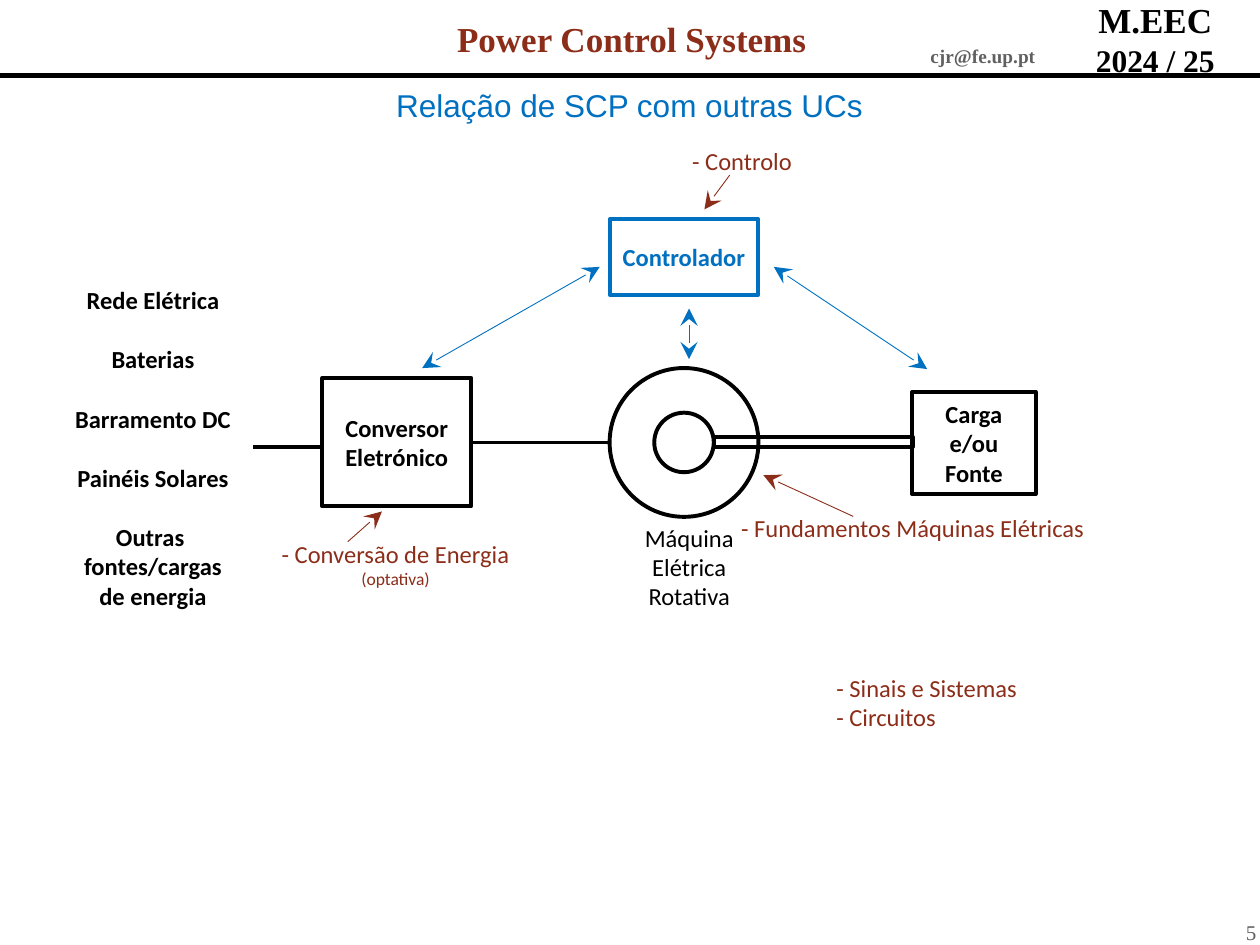
import pptx
import pptx.util
import pptx.dml.color
import pptx.enum.shapes
import pptx.enum.text
import pptx.oxml.ns
import lxml.etree

Cm, Pt = pptx.util.Cm, pptx.util.Pt
KIND = pptx.enum.shapes.MSO_SHAPE
ALIGN = pptx.enum.text.PP_ALIGN
ANCHOR = pptx.enum.text.MSO_ANCHOR
COLORS = {"black": "000000", "blue": "0070C0", "brown": "8C2D19", "gray": "606060"}

# Text formats: font values, then layout values
HEAD = dict(name="Times New Roman", bold=True, color="brown", size=20, pad=False)
TITLE = dict(name="Arial", color="blue", size=18, pad=False, anchor="TOP", wrap=True)
NOTE = dict(color="brown", anchor="TOP", wrap=True)
BOLD = dict(bold=True)

# A paragraph is a text, or a text with its own values
TITLE_TEXT = ["Relação de SCP com outras UCs"]
TITLE_AT = (5.69, 1.73, 14, 0.79)
TEXTS = [
    ((7.39, 0.33, 10.69, 0.89), ["Power Control Systems"], HEAD),
    ((24.03, 18.52, 1.3, 0.53), ["5"],
     HEAD | dict(bold=False, color="gray", size=12, align="RIGHT")),
    ((21.69, 0.03, 3.2, 1.5), ["M.EEC", ("2024 / 25", dict(size=18))],
     HEAD | dict(color="black")),
    ((17.91, 0.74, 3.81, 0.79), ["cjr@fe.up.pt"], HEAD | dict(color="gray", size=11)),
    ((12.6, 10.41, 2.59, 2.06), ["Máquina", "Elétrica", "Rotativa"],
     NOTE | dict(color="black")),
    ((1.09, 5.38, 3.99, 7.29),
     ["Rede Elétrica"]
     + [(source, dict(gap=17)) for source in
        ("Baterias", "Barramento DC", "Painéis Solares", "Outras ")]
     + ["fontes/cargas", "de energia"], BOLD),
    ((14.55, 10.21, 7.7, 0.86), ["- Fundamentos Máquinas Elétricas"], NOTE),
    ((5.41, 10.74, 5.13, 1.27),
     ["- Conversão de Energia", ("(optativa)", dict(size=10))], NOTE),
    ((13.41, 2.82, 3.1, 0.86), ["- Controlo"], NOTE),
    ((16.61, 13.44, 4.17, 1.45), ["- Sinais e Sistemas", "- Circuitos"],
     NOTE | dict(align="LEFT")),
]

SHAPES = [
    ("OVAL", (12.29, 7.42, 3, 3), "black", []),
    ("OVAL", (13.19, 8.32, 1.2, 1.2), "black", []),
    ("RECTANGLE", (14.4, 8.81, 4, 0.2), "black", []),
    ("RECTANGLE", (18.39, 7.9, 2.49, 2.06), "black", ["Carga", "e/ou", "Fonte"]),
    ("RECTANGLE", (6.5, 7.62, 3, 2.59), "black", ["Conversor", "Eletrónico"]),
    ("RECTANGLE", (12.29, 4.42, 3, 1.52), "blue", ["Controlador"]),
]

# Ends, colour, width, arrowheads
WIRE = ("black", 2.25, ())
SIGNAL = ("blue", 0.5, ("headEnd", "tailEnd"))
POINTER = ("brown", 0.5, ("tailEnd",))
LINES = [
    ((0, 1.52, 25.4, 1.52), ("black", 3, ())),
    ((12.29, 8.92, 9.5, 8.92), WIRE),
    ((6.5, 9.02, 5.11, 9.02), WIRE),
    ((12.09, 5.38, 8.51, 7.42), SIGNAL),
    ((13.89, 6.22, 13.89, 7.24), SIGNAL),
    ((15.6, 5.38, 18.69, 7.44), SIGNAL),
    ((7.01, 10.92, 7.7, 10.31), POINTER),
    ((17.2, 10.41, 15.39, 9.58), POINTER),
    ((14.71, 3.53, 14.2, 4.22), POINTER),
]


def rgb(color):
    return pptx.dml.color.RGBColor.from_string(COLORS[color])


def cms(values):
    return [Cm(value) for value in values]


def add_xml(parent, tag, **values):
    lxml.etree.SubElement(parent, pptx.oxml.ns.qn(tag), values)


def write(shape, paras, form):
    form = dict(name="Calibri", size=14, bold=False, color="black", align="CENTER",
                anchor="MIDDLE", wrap=False, pad=True, gap=0) | form
    frame = shape.text_frame
    frame.auto_size = pptx.enum.text.MSO_AUTO_SIZE.NONE
    frame.word_wrap = form["wrap"]
    frame.vertical_anchor = ANCHOR[form["anchor"]]
    if not form["pad"]:
        for side in ("left", "top", "right", "bottom"):
            setattr(frame, "margin_" + side, 0)
    for index, item in enumerate(paras):
        text, own = item if isinstance(item, tuple) else (item, {})
        style = form | own
        para = frame.add_paragraph() if index else frame.paragraphs[0]
        para.text = text
        para.alignment = ALIGN[style["align"]]
        para.space_before = Pt(style["gap"])
        font = para.runs[0].font
        for key in ("name", "bold"):
            setattr(font, key, style[key])
        font.size = Pt(style["size"])
        font.color.rgb = rgb(style["color"])


def add_shape(slide, kind, box, color, paras):
    shape = slide.shapes.add_shape(KIND[kind], *cms(box))
    shape.shadow.inherit = False
    shape.fill.background()
    shape.line.color.rgb = rgb(color)
    shape.line.width = Pt(2.25)
    write(shape, paras, BOLD | dict(color=color))


def add_line(slide, ends, color, width, heads):
    line = slide.shapes.add_connector(
        pptx.enum.shapes.MSO_CONNECTOR.STRAIGHT, *cms(ends))
    line.line.color.rgb = rgb(color)
    line.line.width = Pt(width)
    for head in heads:
        add_xml(line.line._get_or_add_ln(), "a:" + head,
                type="stealth", w="lg", len="lg")
    add_xml(line._element.spPr, "a:effectLst")


def main():
    deck = pptx.Presentation()
    deck.slide_width, deck.slide_height = Cm(25.4), Cm(19.05)
    slide = deck.slides.add_slide(deck.slide_layouts[5])
    title = slide.shapes.title
    title.left, title.top, title.width, title.height = cms(TITLE_AT)
    write(title, TITLE_TEXT, TITLE)
    for shape in SHAPES:
        add_shape(slide, *shape)
    for ends, style in LINES:
        add_line(slide, ends, *style)
    for box, paras, form in TEXTS:
        write(slide.shapes.add_textbox(*cms(box)), paras, form)
    deck.save("out.pptx")


if __name__ == "__main__":
    main()
